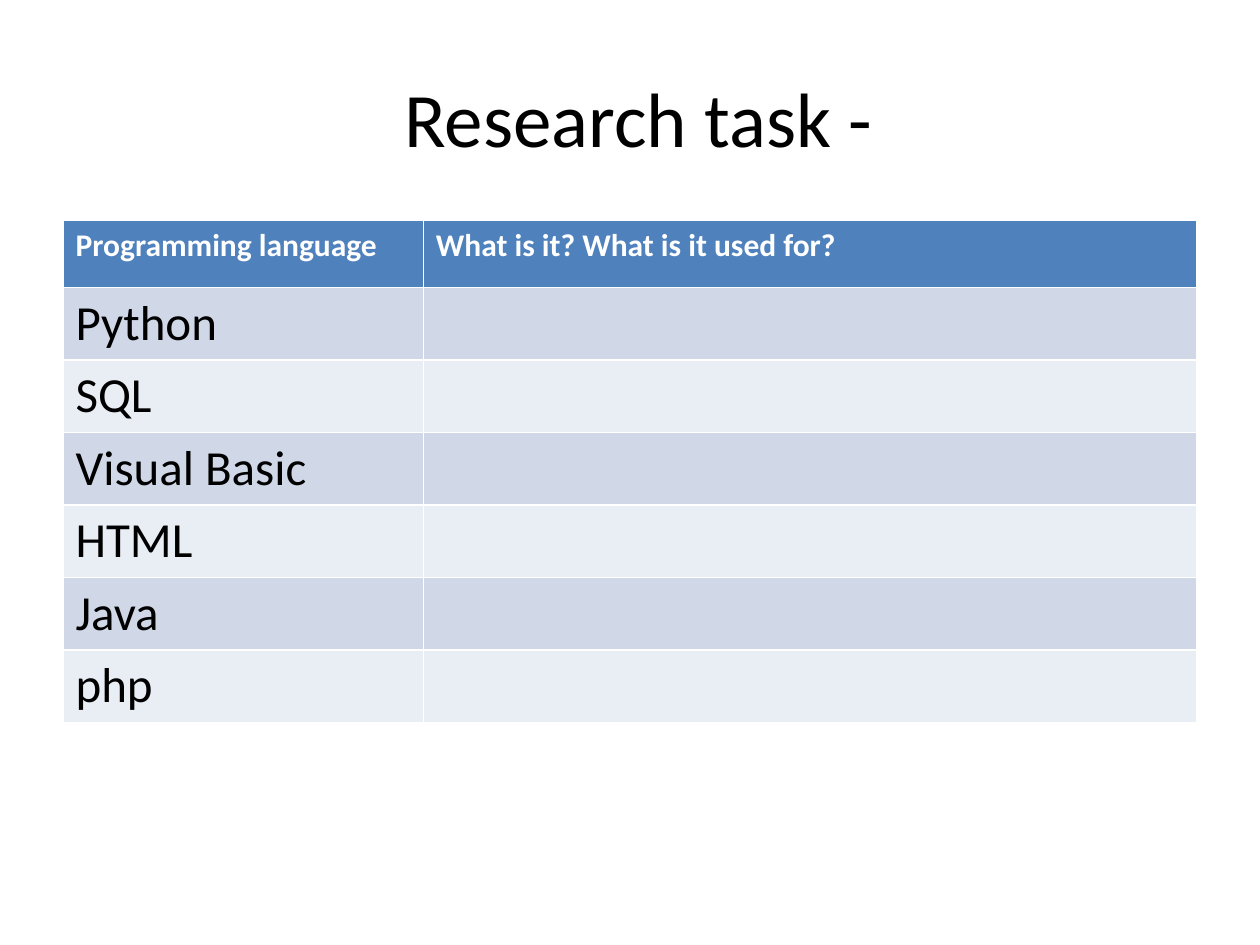
from dataclasses import dataclass

import pptx
import pptx.dml.color
import pptx.enum.text
import pptx.table
import pptx.text.text
import pptx.util

Inches = pptx.util.Inches

FONT = "Calibri"
COLORS = {
    "header": "4F81BD",
    "odd": "D0D8E8",
    "even": "E9EDF4",
    "light": "FFFFFF",
    "dark": "000000",
}


@dataclass(frozen=True)
class RowStyle:
    fill: str
    color: str
    size: int
    bold: bool


HEADER = RowStyle("header", "light", 18, True)
BANDS = (RowStyle("odd", "dark", 28, False), RowStyle("even", "dark", 28, False))
HEADINGS = ("Programming language", "What is it? What is it used for?")
LANGUAGES = ("Python", "SQL", "Visual Basic", "HTML", "Java", "php")
COLUMN_WIDTHS = (2.86, 6.14)
ROW_HEIGHT = 0.53


def rgb(name: str) -> pptx.dml.color.RGBColor:
    return pptx.dml.color.RGBColor.from_string(COLORS[name])


def format_runs(p: pptx.text.text._Paragraph, size: int, color: str, bold: bool) -> None:
    for r in p.runs:
        r.font.name = FONT
        r.font.size = pptx.util.Pt(size)
        r.font.bold = bold
        r.font.color.rgb = rgb(color)


def fill_cell(cell: pptx.table._Cell, text: str, style: RowStyle) -> None:
    cell.fill.solid()
    cell.fill.fore_color.rgb = rgb(style.fill)
    if text:
        cell.text_frame.text = text
        format_runs(cell.text_frame.paragraphs[0], style.size, style.color, style.bold)


def add_title(s: pptx.slide.Slide, text: str) -> None:
    sp = s.shapes.title
    sp.left, sp.top, sp.width, sp.height = map(Inches, (0.5, 0.3, 9, 1.25))
    tf = sp.text_frame
    tf.text = text
    tf.vertical_anchor = pptx.enum.text.MSO_ANCHOR.MIDDLE
    p = tf.paragraphs[0]
    p.alignment = pptx.enum.text.PP_ALIGN.CENTER
    format_runs(p, 44, "dark", False)


def add_language_table(s: pptx.slide.Slide) -> None:
    rows = [HEADINGS] + [(language, "") for language in LANGUAGES]
    table = s.shapes.add_table(
        len(rows), len(HEADINGS), Inches(0.5), Inches(1.75),
        Inches(sum(COLUMN_WIDTHS)), Inches(ROW_HEIGHT * len(rows)),
    ).table
    for column, width in zip(table.columns, COLUMN_WIDTHS):
        column.width = Inches(width)
    for i, texts in enumerate(rows):
        table.rows[i].height = Inches(ROW_HEIGHT)
        style = BANDS[(i - 1) % 2] if i else HEADER
        for j, text in enumerate(texts):
            fill_cell(table.cell(i, j), text, style)


def main() -> None:
    prs = pptx.Presentation()
    prs.slide_width, prs.slide_height = Inches(10), Inches(7.5)
    s = prs.slides.add_slide(prs.slide_layouts[5])
    add_title(s, " Research task -")
    add_language_table(s)
    prs.save("out.pptx")


if __name__ == "__main__":
    main()
